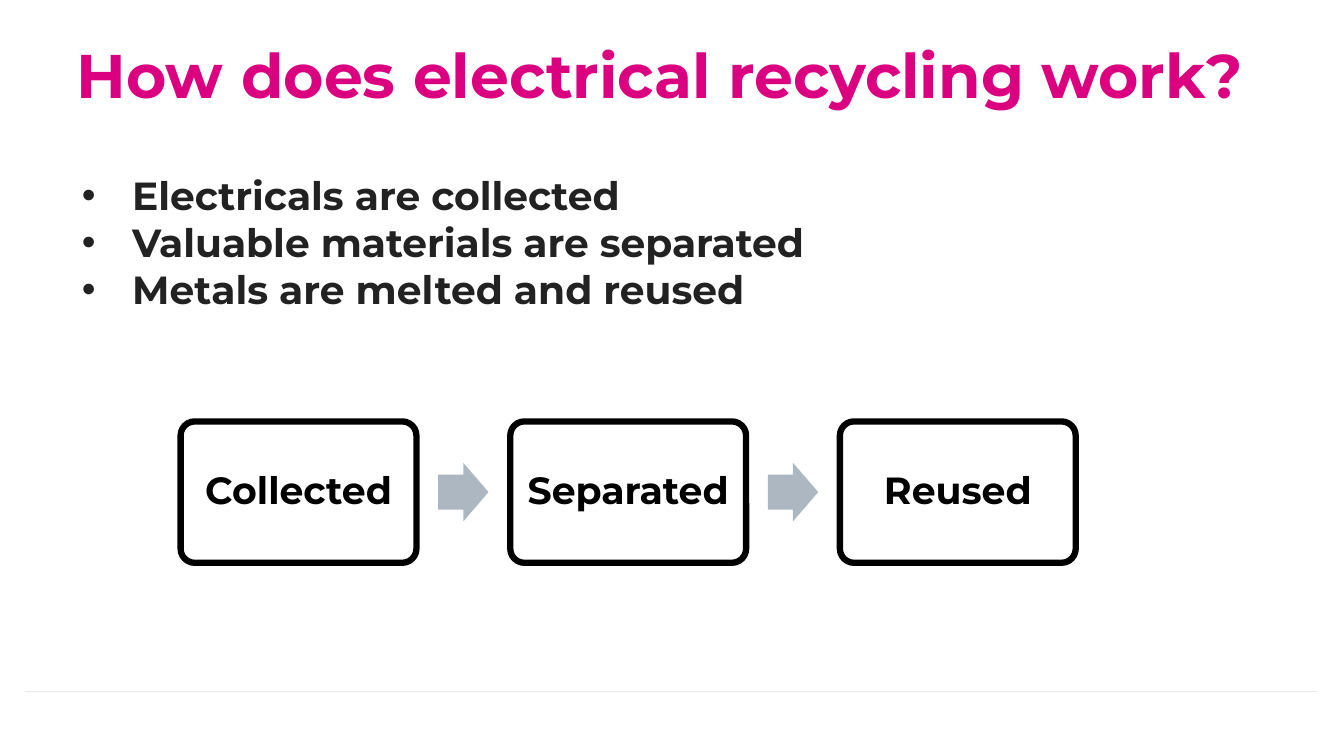
from lxml import etree
from pptx import Presentation
from pptx.dml.color import RGBColor
from pptx.enum import shapes, text
from pptx.oxml import ns
from pptx.util import Pt

COLORS = {"title": "DB0080", "body": "222222", "rule": "E8E8E8", "box": "FFFFFF",
          "ink": "000000", "arrow": "ACB7C1"}
FONT = "Montserrat"
POINTS = ["Electricals are collected", "Valuable materials are separated",
          "Metals are melted and reused"]
STEPS = ["Collected", "Separated", "Reused"]


def rgb(name):
    """Return the named colour."""
    return RGBColor.from_string(COLORS[name])


def style_text(tf, size, color, inset, anchor, align, spacing=1.0):
    """Format a text frame and all its runs."""
    tf.word_wrap = True
    tf.auto_size = text.MSO_AUTO_SIZE.NONE
    tf.vertical_anchor = anchor
    tf.margin_left = tf.margin_right = tf.margin_top = tf.margin_bottom = Pt(inset)
    for p in tf.paragraphs:
        p.alignment = align
        p.line_spacing = spacing
        for r in p.runs:
            r.font.name, r.font.size, r.font.bold = FONT, Pt(size), True
            r.font.color.rgb = rgb(color)


def add_rule(s, x, y, width):
    """Draw the thin footer rule."""
    rule = s.shapes.add_connector(shapes.MSO_CONNECTOR.STRAIGHT,
                                  Pt(x), Pt(y), Pt(x + width), Pt(y))
    rule.line.color.rgb = rgb("rule")
    rule.line.width = Pt(0.75)
    etree.SubElement(rule._element.spPr, ns.qn("a:effectLst"))


def add_title(s, x, y, width, height):
    """Place and format the title placeholder."""
    sp = s.shapes.title
    sp.left, sp.top, sp.width, sp.height = Pt(x), Pt(y), Pt(width), Pt(height)
    sp.text_frame.text = "How does electrical recycling work?"
    style_text(sp.text_frame, 44, "title", 9.4, text.MSO_ANCHOR.TOP,
               text.PP_ALIGN.LEFT, 0.9)


def add_bullets(s, x, y, width, height):
    """Add the bulleted list of stages."""
    tf = s.shapes.add_textbox(Pt(x), Pt(y), Pt(width), Pt(height)).text_frame
    tf.text = "\n".join(POINTS)
    for p in tf.paragraphs:
        pPr = p._p.get_or_add_pPr()
        pPr.set("marL", str(Pt(36)))
        pPr.set("indent", str(-Pt(36)))
        etree.SubElement(pPr, ns.qn("a:buFont"), typeface="Arial")
        etree.SubElement(pPr, ns.qn("a:buChar"), char="•")
    style_text(tf, 28, "body", 9.4, text.MSO_ANCHOR.TOP, text.PP_ALIGN.LEFT)


def add_block(s, kind, x, y, width, height, fill, adjustments):
    """Add a flat filled shape without an outline."""
    sp = s.shapes.add_shape(kind, Pt(x), Pt(y), Pt(width), Pt(height))
    sp.shadow.inherit = False
    sp.fill.solid()
    sp.fill.fore_color.rgb = rgb(fill)
    sp.line.fill.background()
    for i, value in enumerate(adjustments):
        sp.adjustments[i] = value
    return sp


def add_process(s, x, y, width, height):
    """Lay out the steps in a row with an arrow in each gap."""
    gap, arrow_w, arrow_h = 67, 36, 41.8
    box_w = (width - gap * (len(STEPS) - 1)) / len(STEPS)
    for i, step in enumerate(STEPS):
        left = x + i * (box_w + gap)
        if i:
            add_block(s, shapes.MSO_SHAPE.RIGHT_ARROW, left - (gap + arrow_w) / 2,
                      y + (height - arrow_h) / 2, arrow_w, arrow_h, "arrow", [0.6, 0.5])
        sp = add_block(s, shapes.MSO_SHAPE.ROUNDED_RECTANGLE, left, y,
                       box_w, height, "box", [0.1])
        sp.line.color.rgb = rgb("ink")
        sp.line.width = Pt(4.5)
        sp.text_frame.text = step
        style_text(sp.text_frame, 27, "ink", 8, text.MSO_ANCHOR.MIDDLE,
                   text.PP_ALIGN.CENTER, 0.9)


def main():
    """Build and save the slide."""
    prs = Presentation()
    prs.slide_width, prs.slide_height = Pt(960), Pt(540)
    s = prs.slides.add_slide(prs.slide_layouts[5])
    add_rule(s, 18, 493.6, 923)
    add_title(s, 45.4, 23, 858.2, 46.8)
    add_bullets(s, 49, 113, 798.5, 223.2)
    add_process(s, 129, 301, 639.4, 101)
    prs.save("out.pptx")


if __name__ == "__main__":
    main()
